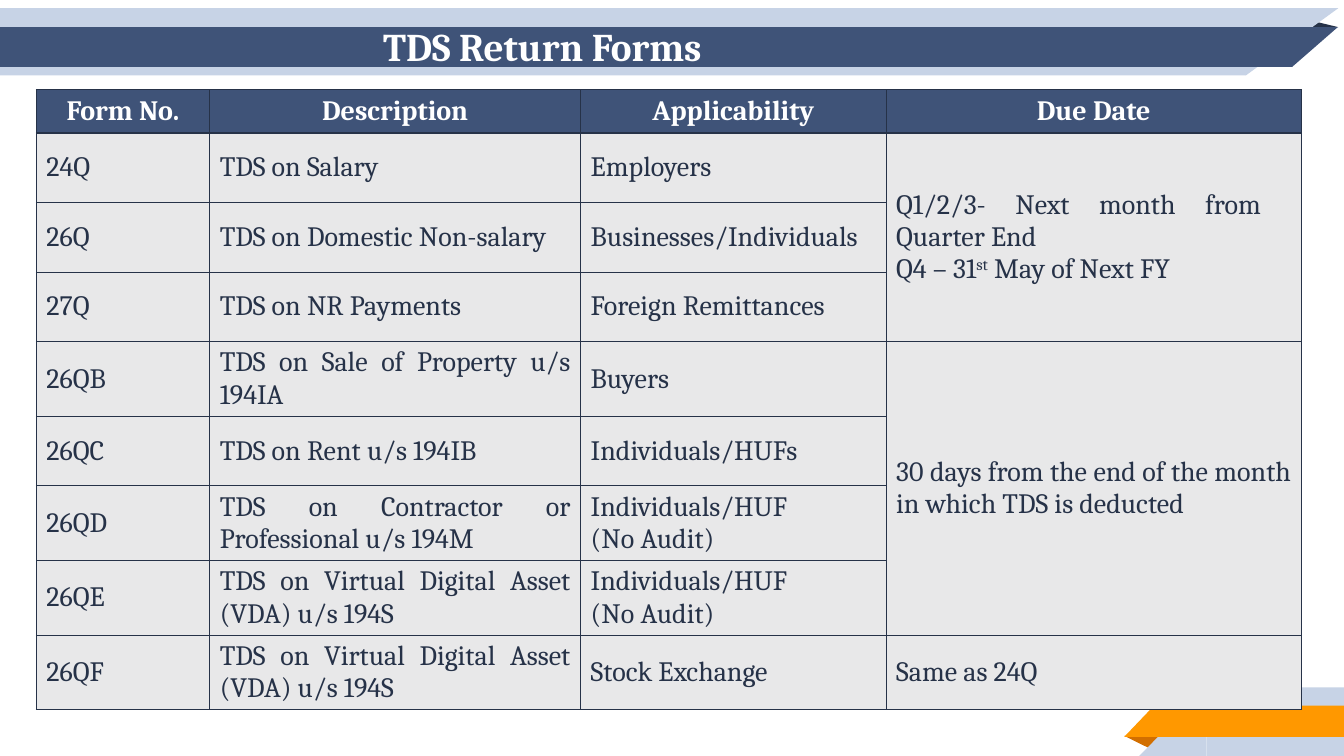
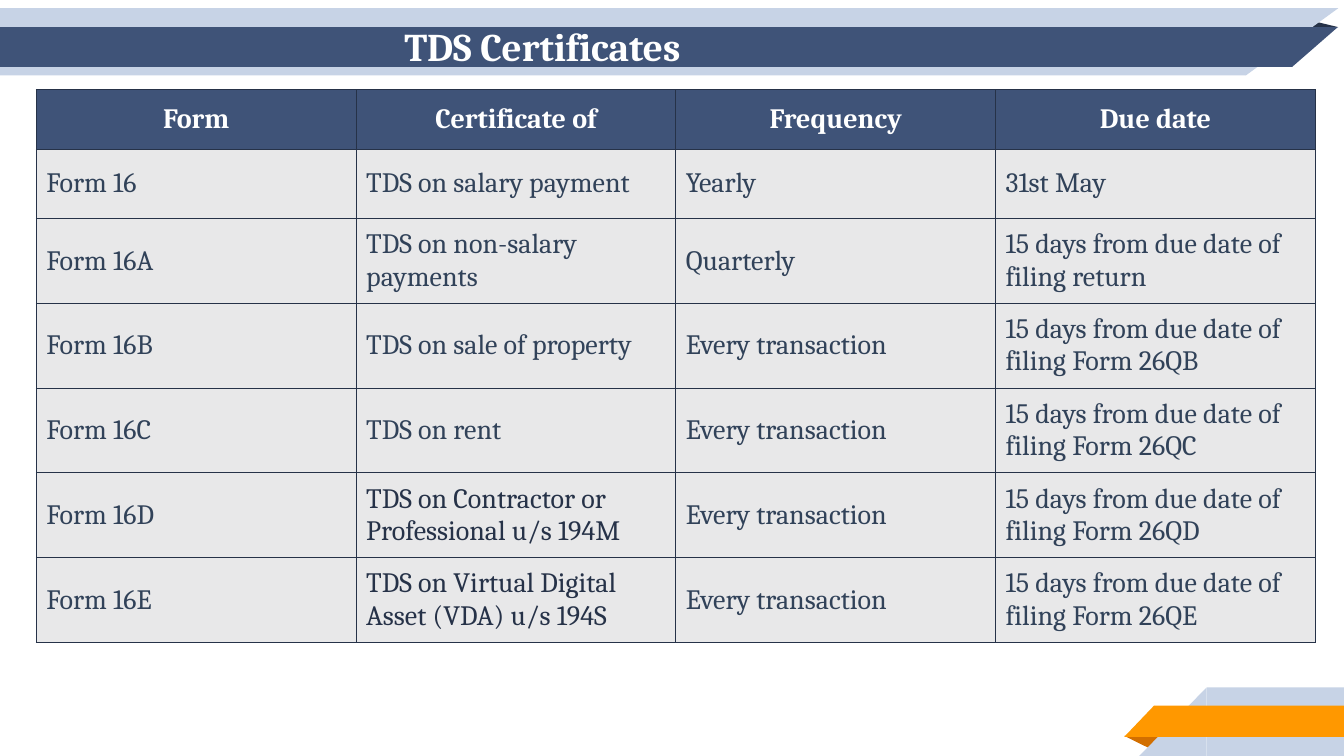
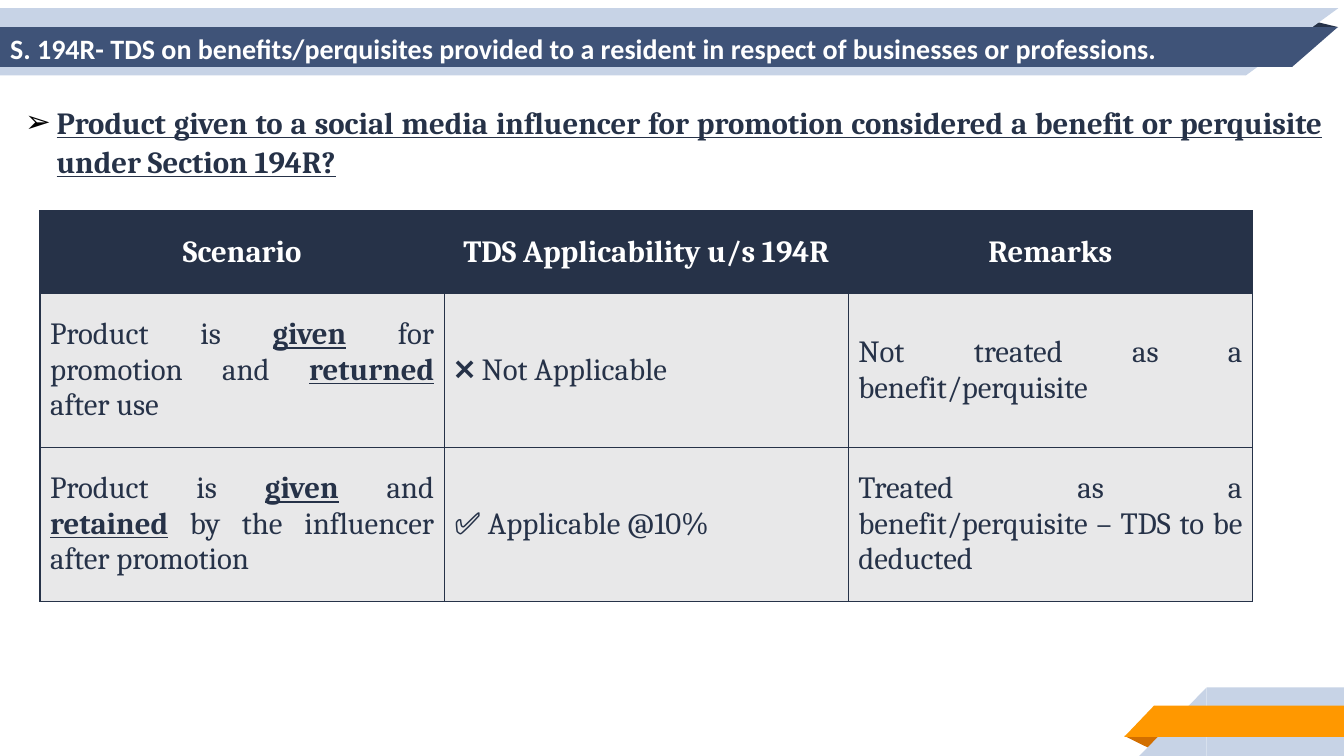
import dataclasses

import lxml.etree
import pptx
import pptx.dml.color
import pptx.enum.shapes
import pptx.enum.text
import pptx.oxml.ns
import pptx.util

Pt = pptx.util.Pt
MIDDLE = pptx.enum.text.MSO_ANCHOR.MIDDLE
ALIGN = pptx.enum.text.PP_ALIGN
SHAPE = pptx.enum.shapes.MSO_SHAPE
PLACEHOLDER = pptx.enum.shapes.PP_PLACEHOLDER


@dataclasses.dataclass(frozen=True)
class Theme:
    navy: str = "263248"
    blue: str = "3F5378"
    slate: str = "314259"
    pale: str = "C7D3E6"
    orange: str = "FF9800"
    rust: str = "D26F00"
    cell: str = "E8E8E9"
    white: str = "FFFFFF"
    black: str = "000000"
    serif: str = "Cambria"
    sans: str = "Calibri"
    title_size: float = 28
    long_title_size: float = 20
    table_size: float = 20
    large_size: float = 22
    inset: float = 7.2
    border: float = 1


THEME = Theme()
STRONG = {"bold": True, "underline": True}
NAVY_TEXT = {"color": THEME.navy}


def rgb(color):
    return pptx.dml.color.RGBColor.from_string(color)


def add_child(parent, tag, **attributes):
    child = lxml.etree.SubElement(parent, pptx.oxml.ns.qn(tag))
    for name, value in attributes.items():
        child.set(name, str(value))
    return child


def add_run(paragraph, text, size, color, font=THEME.serif, bold=False,
            underline=False, superscript=False):
    run = paragraph.add_run()
    run.text = text
    run.font.name = font
    run.font.size = Pt(size)
    run.font.bold = bold
    run.font.underline = underline
    run.font.color.rgb = rgb(color)
    if superscript:
        run.font._element.set("baseline", "30000")


def set_frame(shape, left, top, width, height):
    shape.left, shape.top = Pt(left), Pt(top)
    shape.width, shape.height = Pt(width), Pt(height)


def set_insets(target, horizontal, vertical):
    target.margin_left = target.margin_right = Pt(horizontal)
    target.margin_top = target.margin_bottom = Pt(vertical)


def add_ribbon(slide, pieces):
    group = slide.shapes.add_group_shape()
    for kind, frame, color, rotation, flipped in pieces:
        shape = group.shapes.add_shape(kind, *map(Pt, frame))
        shape.shadow.inherit = False
        shape.fill.solid()
        shape.fill.fore_color.rgb = rgb(color)
        shape.line.fill.background()
        shape.rotation = rotation
        if flipped:
            shape.element.spPr.get_or_add_xfrm().set("flipH", "1")
        if kind == SHAPE.ISOSCELES_TRIANGLE:
            shape.adjustments[0] = 0.32
    return group


def move_ribbons_to_master(presentation, slide):
    fold, block, corner = (SHAPE.ISOSCELES_TRIANGLE, SHAPE.RECTANGLE,
                           SHAPE.RIGHT_TRIANGLE)
    header = add_ribbon(slide, [
        (fold, (890, 8.6, 66, 10.8), THEME.navy, 0, False),
        (block, (0, 5.8, 890, 48), THEME.pale, 0, False),
        (corner, (890, 5.8, 66, 48), THEME.pale, 180, True),
        (block, (0, 19.4, 923, 28.4), THEME.blue, 0, False),
        (corner, (923, 19.4, 32.6, 28.4), THEME.blue, 180, True),
    ])
    footer = add_ribbon(slide, [
        (fold, (803, 525.6, 28, 9.4), THEME.rust, 180, False),
        (block, (862, 491, 98, 49), THEME.pale, 0, False),
        (corner, (813.8, 491, 48.2, 49), THEME.pale, 0, True),
        (block, (824.4, 504, 135.6, 22.4), THEME.orange, 0, False),
        (corner, (803, 504, 21.4, 22.4), THEME.orange, 0, True),
    ])
    master = presentation.slide_master
    for placeholder in list(master.placeholders):
        if placeholder.placeholder_format.type not in (PLACEHOLDER.TITLE, PLACEHOLDER.BODY):
            master.shapes.element.remove(placeholder.element)
    for position, group in enumerate((header, footer), start=2):
        master.shapes.element.insert(position, group.element)


def add_slide(presentation, layout_name, title, frame=(0, 9.4, 774.8, 46.8),
              size=THEME.title_size, font=THEME.serif, alignment=ALIGN.CENTER):
    layout = presentation.slide_layouts.get_by_name(layout_name)
    slide = presentation.slides.add_slide(layout)
    shape = slide.shapes.title
    set_frame(shape, *frame)
    text_frame = shape.text_frame
    text_frame.auto_size = pptx.enum.text.MSO_AUTO_SIZE.NONE
    text_frame.vertical_anchor = MIDDLE
    set_insets(text_frame, THEME.inset, THEME.inset)
    paragraph = text_frame.paragraphs[0]
    paragraph.alignment = alignment
    add_run(paragraph, title, size, THEME.white, font, bold=True)
    return slide


def fill_question(shape, text):
    set_frame(shape, -18, 69.2, 969.8, 116.6)
    text_frame = shape.text_frame
    text_frame.auto_size = pptx.enum.text.MSO_AUTO_SIZE.NONE
    set_insets(text_frame, THEME.inset, 3.6)
    paragraph = text_frame.paragraphs[0]
    paragraph.alignment = ALIGN.JUSTIFY
    paragraph.line_spacing = 1.05
    paragraph.space_before = Pt(0)
    properties = paragraph._p.get_or_add_pPr()
    properties.set("marL", str(Pt(51.2)))
    properties.set("indent", str(Pt(-22.4)))
    add_child(add_child(properties, "a:buClr"), "a:srgbClr", val=THEME.black)
    add_child(properties, "a:buFont", typeface="Arial")
    add_child(properties, "a:buChar", char="➢")
    add_run(paragraph, text, THEME.large_size, THEME.navy, **STRONG)


def set_borders(cell):
    properties = cell._tc.get_or_add_tcPr()
    for position, side in enumerate(("a:lnL", "a:lnR", "a:lnT", "a:lnB")):
        line = add_child(properties, side, w=Pt(THEME.border))
        add_child(add_child(line, "a:solidFill"), "a:srgbClr", val=THEME.navy)
        properties.insert(position, line)


def fill_cell(cell, content, alignment, size, color, bold):
    paragraphs = content if isinstance(content, list) else [content]
    for index, runs in enumerate(paragraphs):
        text_frame = cell.text_frame
        paragraph = text_frame.add_paragraph() if index else text_frame.paragraphs[0]
        paragraph.alignment = alignment
        for run in runs if isinstance(runs, list) else [runs]:
            text, changes = run if isinstance(run, tuple) else (run, {})
            add_run(paragraph, text, **{"size": size, "color": color, "bold": bold, **changes})


def add_table(slide, position, widths, heights, rows, alignments, size=THEME.table_size,
              header_color=THEME.blue, text_color=THEME.navy, vertical_inset=3.6):
    table = slide.shapes.add_table(
        len(rows), len(widths), *map(Pt, position), Pt(sum(widths)), Pt(sum(heights))).table
    table.horz_banding = False
    for column, width in zip(table.columns, widths):
        column.width = Pt(width)
    for row, height in zip(table.rows, heights):
        row.height = Pt(height)
    for row_index, row in enumerate(rows):
        header = row_index == 0
        for column_index, content in enumerate(row):
            cell = table.cell(row_index, column_index)
            cell.fill.solid()
            cell.fill.fore_color.rgb = rgb(header_color if header else THEME.cell)
            set_borders(cell)
            cell.vertical_anchor = MIDDLE
            set_insets(cell, THEME.inset, vertical_inset)
            if content is not None:
                fill_cell(cell, content,
                          ALIGN.CENTER if header else alignments[column_index], size,
                          THEME.white if header else text_color, header)
    return table


def build_return_forms(presentation):
    slide = add_slide(presentation, "Title Only", "TDS Return Forms")
    unaudited = ["Individuals/HUF", "(No Audit)"]
    digital_asset = "TDS on Virtual Digital Asset (VDA) u/s 194S"
    quarter_dates = ["Q1/2/3- Next month from Quarter End",
                     ["Q4 – 31", ("st", {"superscript": True}), " May of Next FY"]]
    rows = [
        ("Form No.", "Description", "Applicability", "Due Date"),
        ("24Q", "TDS on Salary", "Employers", quarter_dates),
        ("26Q", "TDS on Domestic Non-salary", "Businesses/Individuals", None),
        ("27Q", "TDS on NR Payments", "Foreign Remittances", None),
        ("26QB", "TDS on Sale of Property u/s 194IA", "Buyers",
         "30 days from the end of the month in which TDS is deducted"),
        ("26QC", "TDS on Rent u/s 194IB", "Individuals/HUFs", None),
        ("26QD", "TDS on Contractor or Professional u/s 194M", unaudited, None),
        ("26QE", digital_asset, unaudited, None),
        ("26QF", digital_asset, "Stock Exchange", "Same as 24Q"),
    ]
    table = add_table(slide, (26, 64), (123.8, 265, 218.2, 296.6), [31] + [49.7] * 8,
                      rows, [ALIGN.LEFT] + [ALIGN.JUSTIFY] * 3)
    table.cell(1, 3).margin_right = Pt(28.8)
    for first, last in ((1, 3), (4, 7)):
        table.cell(first, 3).merge(table.cell(last, 3))


def build_certificates(presentation):
    slide = add_slide(presentation, "Title Only", "TDS Certificates")
    transactions = {
        "B": "TDS on sale of property",
        "C": "TDS on rent",
        "D": [[("TDS on Contractor or Professional u/s 194M", NAVY_TEXT)]],
        "E": [[("TDS on Virtual Digital Asset (VDA) u/s 194S", NAVY_TEXT)]],
    }
    rows = [
        ("Form", "Certificate of", "Frequency", "Due date"),
        ("Form 16", "TDS on salary payment", "Yearly", "31st May"),
        ("Form 16A", "TDS on non-salary payments", "Quarterly",
         "15 days from due date of filing return"),
    ] + [
        (f"Form 16{letter}", payment, "Every transaction",
         f"15 days from due date of filing Form 26Q{letter}")
        for letter, payment in transactions.items()
    ]
    add_table(slide, (26, 64), [228.4] * 4, [42.5] + [49.7] * 6, rows, [ALIGN.LEFT] * 4,
              text_color=THEME.slate, vertical_inset=THEME.inset)


def build_benefits(presentation):
    slide = add_slide(
        presentation, "Title and Content",
        "S. 194R- TDS on benefits/perquisites provided to a resident in respect of "
        "businesses or professions.",
        (0, 10.8, 933.8, 46.8), THEME.long_title_size, THEME.sans, ALIGN.LEFT)
    fill_question(slide.placeholders[1],
                  "Product given to a social media influencer for promotion considered "
                  "a benefit or perquisite under Section 194R?")
    rows = [
        ("Scenario", "TDS Applicability u/s 194R", "Remarks"),
        ([["Product is ", ("given", STRONG), " for promotion and ",
           ("returned ", STRONG), "after use"]],
         "❌ Not Applicable", "Not treated as a benefit/perquisite"),
        ([["Product is ", ("given", STRONG), " and", (" retained", STRONG),
           " by the influencer after promotion"]],
         "✅ Applicable @10%", "Treated as a benefit/perquisite – TDS to be deducted"),
    ]
    add_table(slide, (28.6, 150.5), [288.7] * 3, (59, 110, 110), rows,
              (ALIGN.JUSTIFY, ALIGN.LEFT, ALIGN.JUSTIFY), THEME.large_size, THEME.navy)
    return slide


def main():
    presentation = pptx.Presentation()
    presentation.slide_width, presentation.slide_height = Pt(960), Pt(540)
    build_return_forms(presentation)
    build_certificates(presentation)
    last_slide = build_benefits(presentation)
    move_ribbons_to_master(presentation, last_slide)
    presentation.save("out.pptx")


if __name__ == "__main__":
    main()
